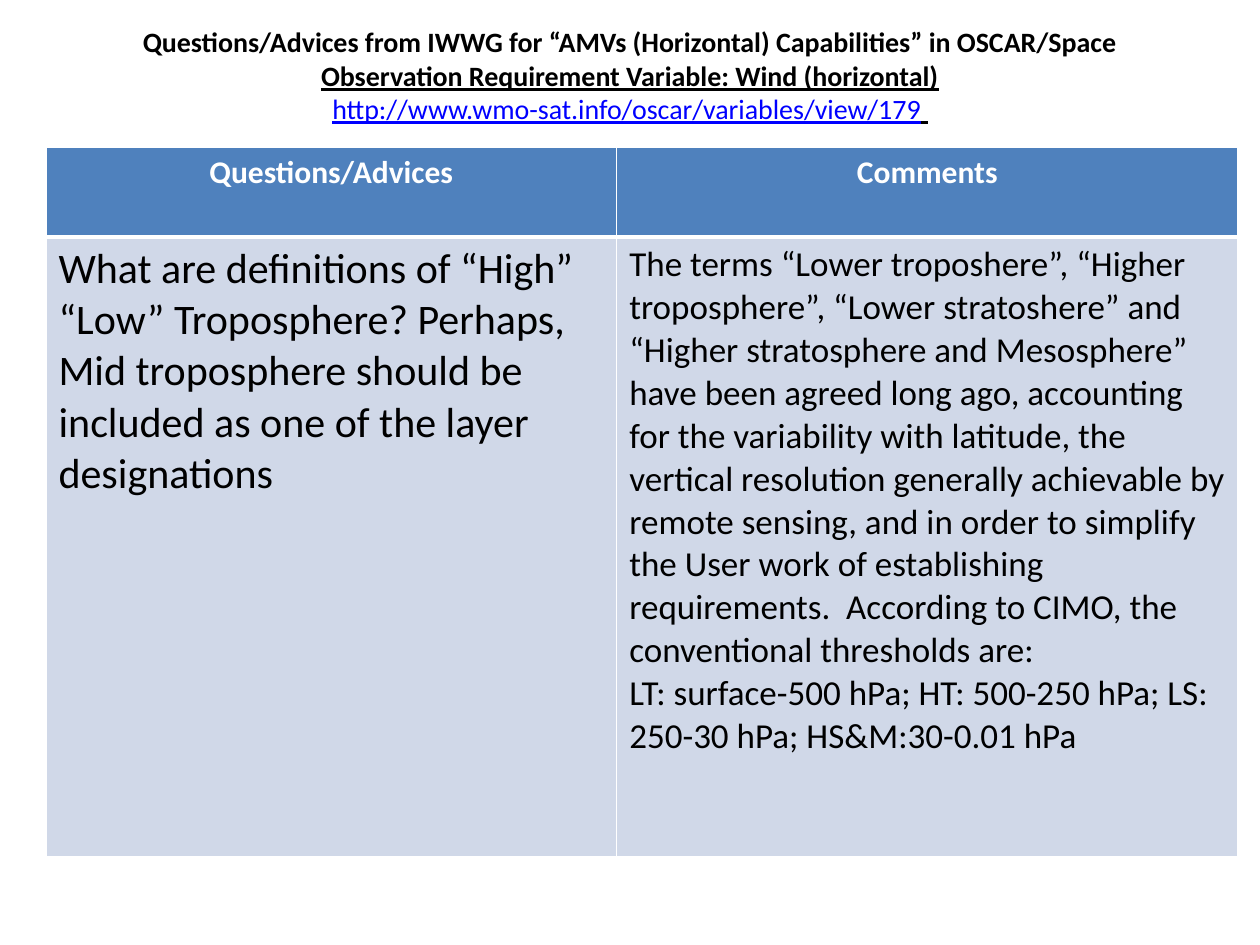
from lxml import etree
from pptx import Presentation
from pptx.dml.color import RGBColor
from pptx.enum.text import MSO_ANCHOR, PP_ALIGN
from pptx.oxml.ns import qn
from pptx.util import Inches, Pt

CENTER, LEFT = PP_ALIGN.CENTER, PP_ALIGN.LEFT
MIDDLE = MSO_ANCHOR.MIDDLE

THEME = {
    "font": "Calibri",
    "black": "000000",
    "white": "FFFFFF",
    "link": "0000FF",
    "header": "4F81BD",
    "body": "D0D8E8",
    "title_size": 16,
    "header_size": 18,
    "question_size": 24,
    "comment_size": 20,
}

deck = Presentation()
deck.slide_width, deck.slide_height = Inches(10), Inches(7.5)
W, H = deck.slide_width, deck.slide_height
slide = deck.slides.add_slide(deck.slide_layouts[6])


def write(paragraph, text, size, color, **format_values):
    run = paragraph.add_run()
    run.text = text
    values = {"name": THEME["font"], "size": Pt(size), **format_values}
    for key, value in values.items():
        setattr(run.font, key, value)
    run.font.color.rgb = RGBColor.from_string(color)


def draw_borders(cell, bottom_width):
    properties = cell._tc.get_or_add_tcPr()
    widths = {"a:lnL": 1, "a:lnR": 1, "a:lnT": 1, "a:lnB": bottom_width}
    for position, (side, width) in enumerate(widths.items()):
        line = etree.Element(qn(side), w=str(Pt(width)))
        fill = etree.SubElement(line, qn("a:solidFill"))
        etree.SubElement(fill, qn("a:srgbClr"), val=THEME["white"])
        properties.insert(position, line)


comparison = slide.shapes.add_table(
    2, 2, int(W * 0.0365), int(H * 0.156), int(W * 0.946), int(H * 0.75)
).table
for column, share in zip(comparison.columns, (0.453, 0.493)):
    column.width = int(W * share)
for row, share in zip(comparison.rows, (0.095, 0.656)):
    row.height = int(H * share)

question = (
    "What are definitions of “High” “Low” Troposphere? Perhaps, Mid troposphere "
    "should be included as one of the layer designations"
)
agreement = (
    "The terms “Lower troposhere”, “Higher troposphere”, “Lower stratoshere” and "
    "“Higher stratosphere and Mesosphere” have been agreed long ago, accounting for "
    "the variability with latitude, the vertical resolution generally achievable by "
    "remote sensing, and in order to simplify the User work of establishing "
    "requirements.  According to CIMO, the conventional thresholds are:"
)
thresholds = "LT: surface-500 hPa; HT: 500-250 hPa; LS: 250-30 hPa; HS&M:30-0.01 hPa"

header_look = {"fill": "header", "ink": "white", "bold": True, "align": CENTER, "bottom": 3}
body_look = {"fill": "body", "ink": "black", "bold": False, "align": LEFT, "bottom": 1}
rows = [
    (header_look, [(["Questions/Advices"], "header_size"), (["Comments"], "header_size")]),
    (body_look, [([question], "question_size"), ([agreement, thresholds], "comment_size")]),
]
for row_index, (look, entries) in enumerate(rows):
    for column_index, (texts, size) in enumerate(entries):
        cell = comparison.cell(row_index, column_index)
        cell.fill.solid()
        cell.fill.fore_color.rgb = RGBColor.from_string(THEME[look["fill"]])
        draw_borders(cell, look["bottom"])
        for text_index, text in enumerate(texts):
            frame = cell.text_frame
            paragraph = frame.add_paragraph() if text_index else frame.paragraphs[0]
            paragraph.alignment = look["align"]
            write(paragraph, text, THEME[size], THEME[look["ink"]], bold=look["bold"])

heading = slide.shapes.add_textbox(
    int(W * 0.05), int(H * 0.003), int(W * 0.9), int(H * 0.153)
).text_frame
heading.word_wrap = True
heading.vertical_anchor = MIDDLE
title = heading.paragraphs[0]
title.alignment = CENTER
title_lines = [
    [("Questions/Advices from IWWG for “AMVs (Horizontal) Capabilities” in OSCAR/Space", "black", True, False)],
    [("Observation Requirement Variable: Wind (horizontal)", "black", True, True)],
    [("http://www.wmo-sat.info/oscar/variables/view/179", "link", False, True), (" ", "black", True, True)],
]
for line_index, parts in enumerate(title_lines):
    if line_index:
        title.add_line_break()
    for text, ink, bold, underline in parts:
        write(title, text, THEME["title_size"], THEME[ink], bold=bold, underline=underline)

deck.save("out.pptx")
